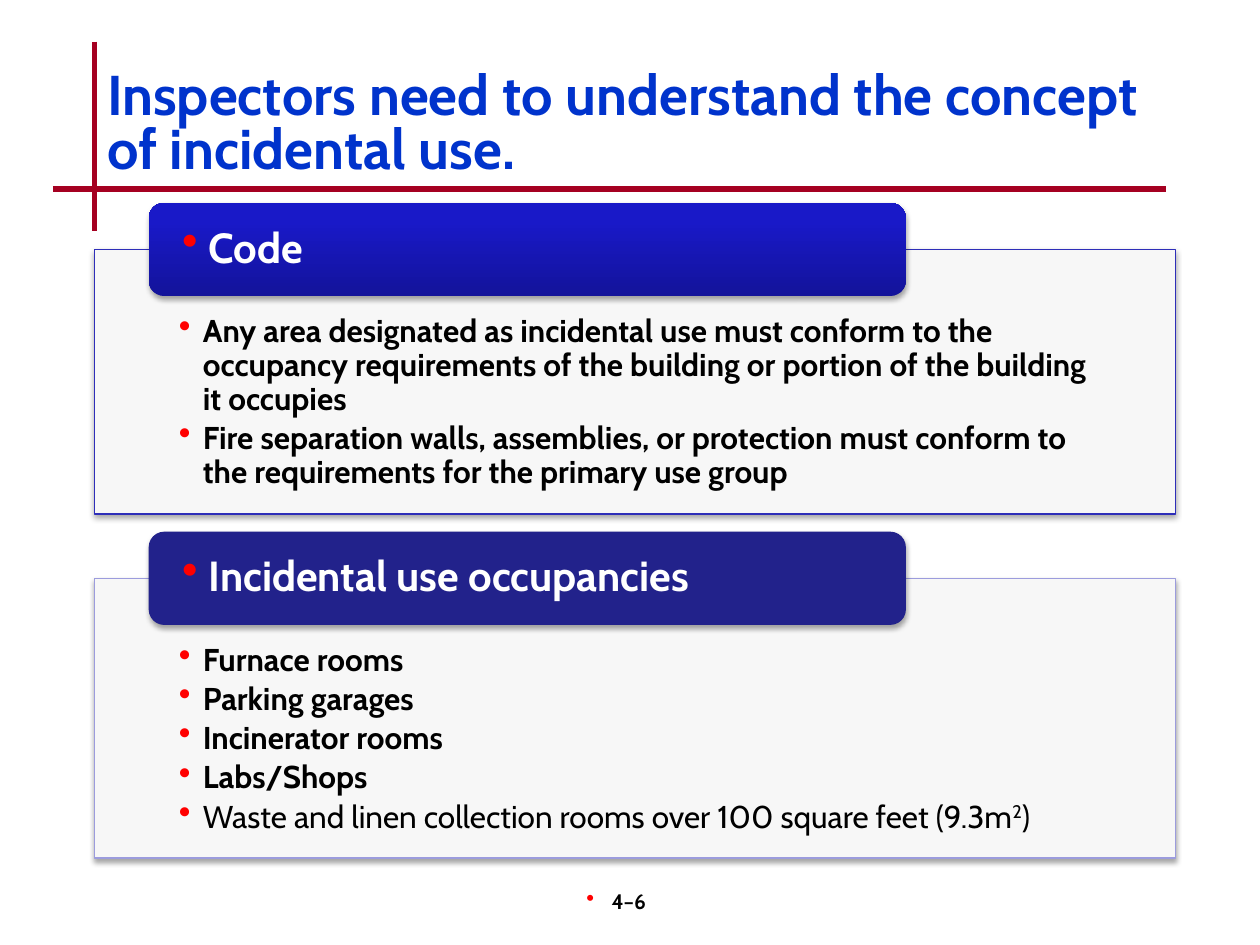
"""Build the slide about the concept of incidental use."""
from lxml import etree
from pptx import Presentation
from pptx import util as u
from pptx.dml.color import RGBColor
from pptx.enum import shapes, text
from pptx.oxml import ns

PX = 9144
RED, RULE, BLACK, WHITE = "FF0000", "A50021", "000000", "FFFFFF"
color = RGBColor.from_string


def write(para, words, size=18, ink=BLACK, bold=True, hang=0, spacing=None, after=None, raised=False):
    if hang:
        props = para._p.get_or_add_pPr()
        props.set("marL", str(hang * PX))
        props.set("indent", str(-hang * PX))
        tint = etree.SubElement(props, ns.qn("a:buClr"))
        etree.SubElement(tint, ns.qn("a:srgbClr"), val=RED)
        etree.SubElement(props, ns.qn("a:buSzPct"), val="110000")
        etree.SubElement(props, ns.qn("a:buChar"), char="•")
    if spacing:
        para.line_spacing = spacing
    if after:
        para.space_after = u.Pt(after)
    span = para.add_run()
    span.text = words
    span.font.name = "Cabin"
    span.font.size = u.Pt(size)
    span.font.bold = bold
    span.font.color.rgb = color(ink)
    if raised:
        span._r.get_or_add_rPr().set("baseline", "30000")


def add_block(kind, left, top, width, height, insets, anchor):
    block = page.shapes.add_shape(kind, left * PX, top * PX, width * PX, height * PX)
    block.shadow.inherit = False
    effects = block._element.spPr.find(ns.qn("a:effectLst"))
    shadow = etree.SubElement(effects, ns.qn("a:outerShdw"), blurRad="40000", dist="23000", dir="5400000", rotWithShape="0")
    tint = etree.SubElement(shadow, ns.qn("a:srgbClr"), val=BLACK)
    etree.SubElement(tint, ns.qn("a:alpha"), val="35000")
    frame = block.text_frame
    frame.word_wrap = True
    frame.vertical_anchor = anchor
    frame.margin_left = frame.margin_right = insets[0] * PX
    frame.margin_top, frame.margin_bottom = insets[1] * PX, insets[2] * PX
    frame.paragraphs[0].alignment = text.PP_ALIGN.LEFT
    return block


deck = Presentation()
deck.slide_width, deck.slide_height = 1000 * PX, 750 * PX
page = deck.slides.add_slide(deck.slide_layouts[5])

for ends in [(75, 33, 75, 183), (42, 150, 925, 150)]:
    rule = page.shapes.add_connector(shapes.MSO_CONNECTOR.STRAIGHT, *[end * PX for end in ends])
    rule.line.color.rgb = color(RULE)
    rule.line.width = u.Pt(3)
    etree.SubElement(rule._element.spPr, ns.qn("a:effectLst"))

title = page.shapes.title
title.left, title.top, title.width, title.height = 75 * PX, 50 * PX, 850 * PX, 100 * PX
title.text_frame.word_wrap = True
title.text_frame.auto_size = text.MSO_AUTO_SIZE.NONE
title.text_frame.vertical_anchor = text.MSO_ANCHOR.MIDDLE
heading = title.text_frame.paragraphs[0]
heading.alignment = text.PP_ALIGN.LEFT
write(heading, "Inspectors need to understand the concept of incidental use.", size=32, ink="0033CC", spacing=0.8)

sections = [
    ("Code", 198, 210, "2E2EB9", ["13139A", "1919C8"], [
        "Any area designated as incidental use must conform to the occupancy requirements "
        "of the building or portion of the building it occupies",
        "Fire separation walls, assemblies, or protection must conform to the requirements "
        "for the primary use group",
    ]),
    ("Incidental use occupancies", 459, 222, "9C9CDD", ["22228B"], [
        "Furnace rooms",
        "Parking garages",
        "Incinerator rooms",
        "Labs/Shops",
    ]),
]
for name, top, height, edge, fills, points in sections:
    panel = add_block(shapes.MSO_SHAPE.RECTANGLE, 75, top, 858, height, (67, 52, 14), text.MSO_ANCHOR.TOP)
    panel.fill.solid()
    panel.fill.fore_color.rgb = color("F7F7F7")
    panel.line.color.rgb = color(edge)
    panel.line.width = u.Pt(0.75)
    for number, point in enumerate(points):
        para = panel.text_frame.add_paragraph() if number else panel.text_frame.paragraphs[0]
        para.alignment = text.PP_ALIGN.LEFT
        write(para, point, hang=19, spacing=0.9, after=3)

    header = add_block(shapes.MSO_SHAPE.ROUNDED_RECTANGLE, 118, top - 37, 601, 74, (23, 0, 0), text.MSO_ANCHOR.MIDDLE)
    header.line.fill.background()
    if len(fills) > 1:
        header.fill.gradient()
        header.fill.gradient_angle = 90
        for stop, tint, position in zip(header.fill.gradient_stops, fills, (0, 0.8)):
            stop.color.rgb = color(tint)
            stop.position = position
    else:
        header.fill.solid()
        header.fill.fore_color.rgb = color(fills[0])
    write(header.text_frame.paragraphs[0], name, size=24, ink=WHITE, hang=21, spacing=0.9)

last = panel.text_frame.add_paragraph()
last.alignment = text.PP_ALIGN.LEFT
write(last, "Waste and linen collection rooms over 100 square feet (9.3m", bold=False, hang=19, spacing=0.9, after=3)
write(last, "2", bold=False, raised=True)
write(last, ")", bold=False)

footer = page.shapes.add_textbox(392 * PX, 700 * PX, 208 * PX, 50 * PX).text_frame
footer.word_wrap = True
footer.margin_left, footer.margin_right = 0, 14 * PX
footer.paragraphs[0].alignment = text.PP_ALIGN.CENTER
write(footer.paragraphs[0], "4–6", size=12, hang=20)

deck.save("out.pptx")
